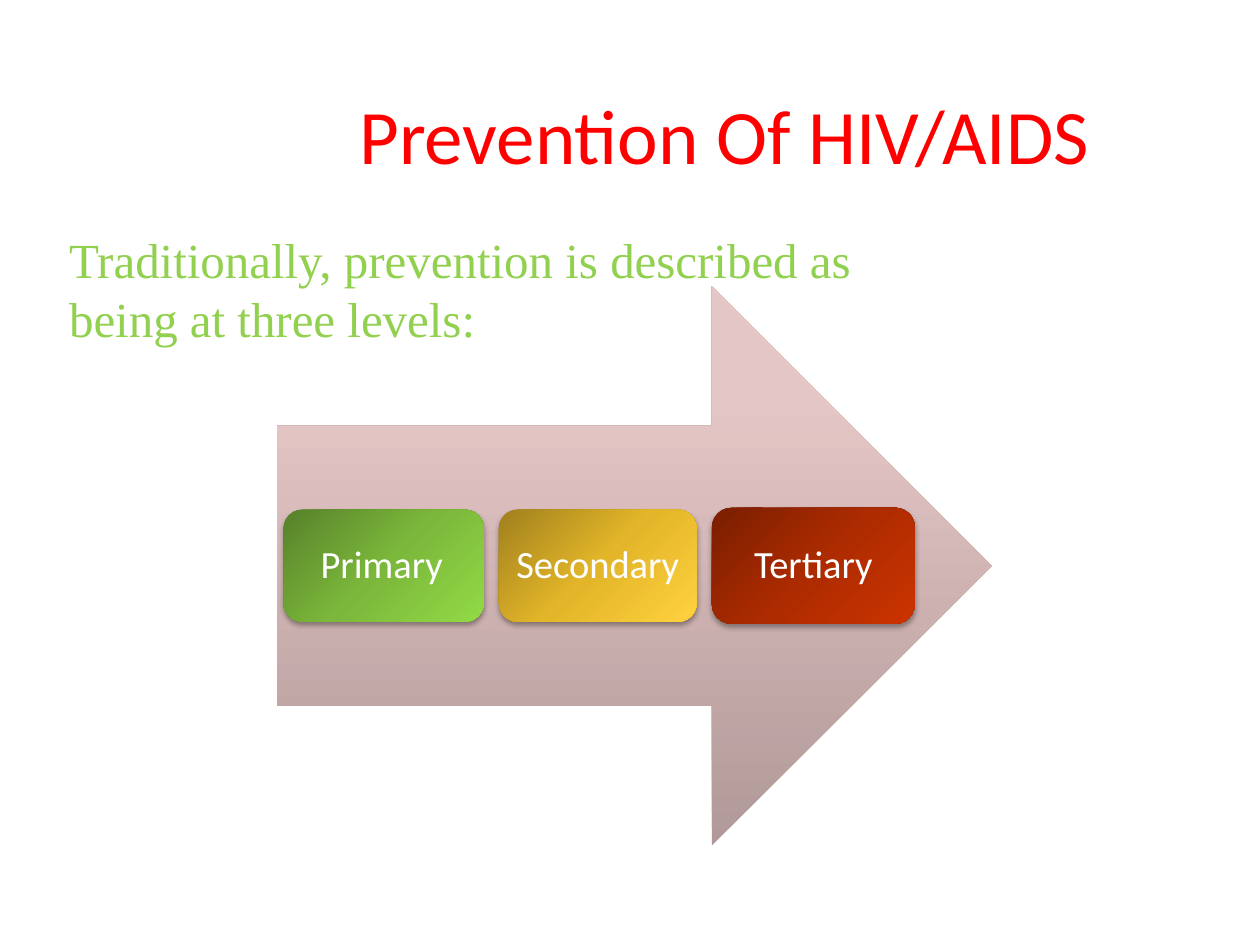
import dataclasses
import typing

import lxml.etree
import pptx
import pptx.dml.color
import pptx.enum.shapes
import pptx.enum.text
import pptx.oxml.ns
import pptx.util

Inches = pptx.util.Inches
Pt = pptx.util.Pt
Shapes = pptx.enum.shapes.MSO_SHAPE
Align = pptx.enum.text.PP_ALIGN
Anchor = pptx.enum.text.MSO_ANCHOR
qn = pptx.oxml.ns.qn

Stops = tuple[tuple[int, str], ...]


@dataclasses.dataclass(frozen=True)
class Theme:
    sans: str = "Calibri"
    serif: str = "Times New Roman"
    title: str = "FF0000"
    intro: str = "92D050"
    label: str = "FFFFFF"
    shadow: str = "000000"
    title_size: int = 44
    intro_size: int = 28
    label_size: int = 22
    arrow: Stops = ((0, "B09998"), (80, "E5C6C6"), (100, "E6C7C6"))
    green: Stops = ((0, "57812A"), (50, "7BB73B"), (100, "92DA46"))
    gold: Stops = ((0, "A0801D"), (50, "E3B629"), (100, "FFD13F"))
    red: Stops = ((0, "791E00"), (50, "AC2B00"), (100, "CC3300"))


@dataclasses.dataclass(frozen=True)
class Level:
    text: str
    left: float
    width: float
    height: float
    stops: Stops


THEME = Theme()
MID = 4.49  # shared centre line of the arrow and the levels
LEVELS = (
    Level("Primary\t", 2.25, 1.59, 0.89, THEME.green),
    Level("Secondary", 3.96, 1.57, 0.89, THEME.gold),
    Level("Tertiary", 5.65, 1.61, 0.92, THEME.red),
)


def add_node(parent: typing.Any, tag: str, **attrs: typing.Any) -> typing.Any:
    values = {key: str(value) for key, value in attrs.items()}
    return lxml.etree.SubElement(parent, qn(tag), values)


def add_run(para: typing.Any, text: str, font: str, size: int, color: str) -> None:
    run = para.add_run()
    run.text = text
    run.font.name = font
    run.font.size = Pt(size)
    run.font.color.rgb = pptx.dml.color.RGBColor.from_string(color)


def add_block(slide: typing.Any, kind: typing.Any, left: float, width: float,
              height: float, stops: Stops, angle: int) -> typing.Any:
    """Add a borderless gradient shape centred on the middle line."""
    shape = slide.shapes.add_shape(kind, Inches(left), Inches(MID - height / 2),
                                   Inches(width), Inches(height))
    grad = add_node(shape.element.spPr, "a:gradFill", rotWithShape=1)
    items = add_node(grad, "a:gsLst")
    for pos, color in stops:
        stop = add_node(items, "a:gs", pos=pos * 1000)
        add_node(stop, "a:srgbClr", val=color)
    add_node(grad, "a:lin", ang=angle * 60000, scaled=0)
    shape.line.fill.background()
    shape.shadow.inherit = False
    return shape


def add_shadow(shape: typing.Any) -> None:
    effects = shape.element.spPr.find(qn("a:effectLst"))
    outer = add_node(effects, "a:outerShdw", blurRad=Pt(3.1), dist=Pt(1.8),
                     dir=90 * 60000, rotWithShape=0)
    color = add_node(outer, "a:srgbClr", val=THEME.shadow)
    add_node(color, "a:alpha", val=35000)


def add_level(slide: typing.Any, level: Level) -> None:
    card = add_block(slide, Shapes.ROUNDED_RECTANGLE, level.left, level.width,
                     level.height, level.stops, 45)
    add_shadow(card)
    frame = card.text_frame
    frame.word_wrap = True
    frame.vertical_anchor = Anchor.MIDDLE
    frame.margin_left = frame.margin_right = Inches(0.09)
    frame.margin_top = frame.margin_bottom = Inches(0.09)
    para = frame.paragraphs[0]
    para.alignment = Align.CENTER
    para.line_spacing = 0.9
    add_run(para, level.text, THEME.sans, THEME.label_size, THEME.label)


def main() -> None:
    deck = pptx.Presentation()
    deck.slide_width, deck.slide_height = Inches(10), Inches(7.5)
    slide = deck.slides.add_slide(deck.slide_layouts[5])

    # Title
    title = slide.shapes.title
    title.left, title.top = Inches(1.5), Inches(0.56)
    title.width, title.height = Inches(8.5), Inches(1)
    title.text_frame.vertical_anchor = Anchor.MIDDLE
    para = title.text_frame.paragraphs[0]
    para.alignment = Align.CENTER
    add_run(para, "Prevention Of HIV/AIDS", THEME.sans, THEME.title_size, THEME.title)

    # Introduction
    intro = slide.shapes.add_textbox(Inches(0.45), Inches(1.77),
                                     Inches(6.92), Inches(1.04))
    intro.text_frame.word_wrap = True
    intro.text_frame.auto_size = pptx.enum.text.MSO_AUTO_SIZE.SHAPE_TO_FIT_TEXT
    add_run(intro.text_frame.paragraphs[0],
            "Traditionally, prevention is described as being at three levels:",
            THEME.serif, THEME.intro_size, THEME.intro)

    # Arrow with the three levels
    add_block(slide, Shapes.RIGHT_ARROW, 2.2, 5.67, 4.44, THEME.arrow, 270)
    for level in LEVELS:
        add_level(slide, level)

    deck.save("out.pptx")


if __name__ == "__main__":
    main()
